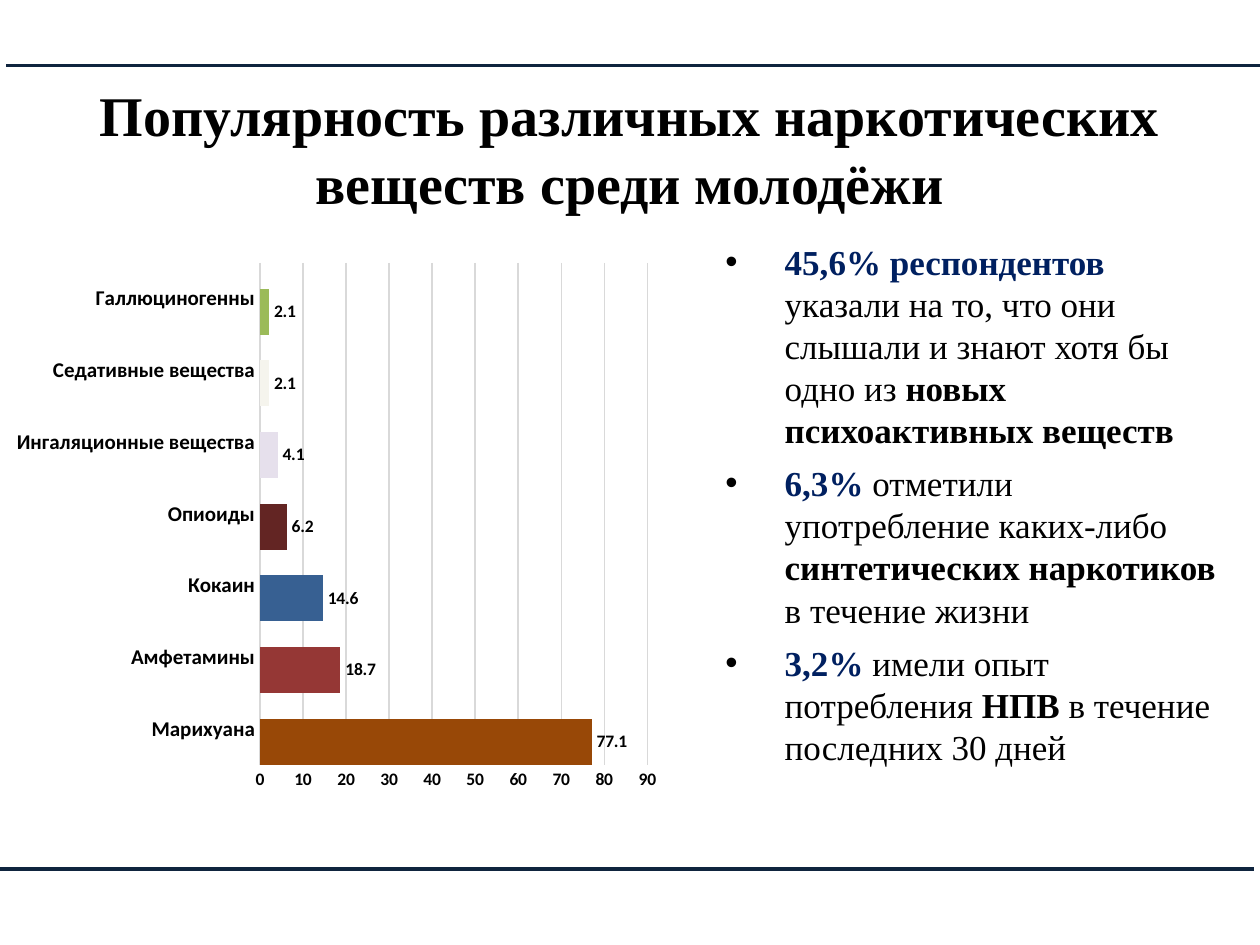
from typing import NamedTuple

from lxml import etree
from pptx import Presentation
from pptx.chart.data import CategoryChartData
from pptx.dml.color import RGBColor
from pptx.enum.chart import XL_CHART_TYPE, XL_LABEL_POSITION, XL_TICK_MARK
from pptx.enum.shapes import MSO_CONNECTOR
from pptx.enum.text import MSO_ANCHOR, MSO_AUTO_SIZE, PP_ALIGN
from pptx.oxml.ns import qn
from pptx.util import Pt

BAR = XL_CHART_TYPE.BAR_CLUSTERED
OUTSIDE = XL_LABEL_POSITION.OUTSIDE_END
NO_TICK = XL_TICK_MARK.NONE
STRAIGHT = MSO_CONNECTOR.STRAIGHT
MIDDLE = MSO_ANCHOR.MIDDLE
NO_FIT = MSO_AUTO_SIZE.NONE
CENTER = PP_ALIGN.CENTER

COLORS = {"text": "000000", "accent": "002060", "rule": "0F243E", "grid": "D9D9D9"}
SERIF = "Times New Roman"
SANS = "Calibri"
INSET = 7.2


class Span(NamedTuple):
    text: str
    bold: bool = False
    color: str = "text"


class Rule(NamedTuple):
    left: float
    right: float
    y: float


class Bar(NamedTuple):
    name: str
    value: float
    color: str


RULES = [Rule(0, 716.4, 496.8), Rule(3.6, 720, 37.44)]
BARS = [
    Bar("Марихуана", 77.1, "984807"),
    Bar("Амфетамины", 18.7, "953735"),
    Bar("Кокаин", 14.6, "376092"),
    Bar("Опиоиды", 6.2, "632523"),
    Bar("Ингаляционные вещества", 4.1, "E6E0EC"),
    Bar("Седативные вещества", 2.1, "F5F4ED"),
    Bar("Галлюциногенны", 2.1, "9BBB59"),
]
SERIES_COLORS = ["4F81BD", "C0504D", "9BBB59"]
PLOT = {"x": 0.38, "y": 0.02, "w": 0.58, "h": 0.92}
BULLETS = [
    [
        Span("45,6% респондентов ", True, "accent"),
        Span("указали на то, что они слышали и знают хотя бы одно из "),
        Span("новых психоактивных веществ", True),
    ],
    [
        Span("6,3%", True, "accent"),
        Span(" отметили употребление каких-либо "),
        Span("синтетических наркотиков ", True),
        Span("в течение жизни"),
    ],
    [
        Span("3,2% ", True, "accent"),
        Span("имели опыт потребления "),
        Span("НПВ", True),
        Span(" в течение последних 30 дней"),
    ],
]


def rgb(name: str) -> RGBColor:
    return RGBColor.from_string(COLORS.get(name, name))


def style_font(font, size: float, face: str, bold: bool = True, color: str = "text") -> None:
    font.size = Pt(size)
    font.name = face
    font.bold = bold
    font.color.rgb = rgb(color)


def add_span(para, span: Span, size: float) -> None:
    run = para.add_run()
    run.text = span.text
    style_font(run.font, size, SERIF, span.bold, span.color)


def prepare_frame(frame) -> None:
    frame.word_wrap = True
    frame.auto_size = NO_FIT
    frame.margin_left = frame.margin_right = Pt(INSET)
    frame.margin_top = frame.margin_bottom = Pt(INSET)


def fill_title(title) -> None:
    title.left, title.top, title.width, title.height = Pt(36), Pt(61.92), Pt(648), Pt(45.36)
    frame = title.text_frame
    prepare_frame(frame)
    frame.vertical_anchor = MIDDLE
    para = frame.paragraphs[0]
    para.alignment = CENTER
    para.space_after = Pt(6)
    add_span(para, Span("Популярность различных наркотических веществ среди молодёжи", True), 32)


def add_bullets(page) -> None:
    box = page.shapes.add_textbox(Pt(405.36), Pt(130.32), Pt(300.24), Pt(325.44))
    frame = box.text_frame
    prepare_frame(frame)
    for index, spans in enumerate(BULLETS):
        para = frame.paragraphs[0] if index == 0 else frame.add_paragraph()
        if index:
            para.space_before = Pt(6.4)
        props = para._p.get_or_add_pPr()
        props.set("marL", str(Pt(36)))
        props.set("indent", str(Pt(-33.84)))
        bullet_color = etree.SubElement(props, qn("a:buClr"))
        etree.SubElement(bullet_color, qn("a:srgbClr"), val=COLORS["text"])
        etree.SubElement(props, qn("a:buFont"), typeface="Arial")
        etree.SubElement(props, qn("a:buChar"), char="•")
        for span in spans:
            add_span(para, span, 20)


def place_plot(chart) -> None:
    plot_area = chart._chartSpace.chart.plotArea
    for old in plot_area.findall(qn("c:layout")):
        plot_area.remove(old)
    layout = etree.Element(qn("c:layout"))
    plot_area.insert(0, layout)
    manual = etree.SubElement(layout, qn("c:manualLayout"))
    etree.SubElement(manual, qn("c:layoutTarget"), val="inner")
    for side in "xy":
        etree.SubElement(manual, qn(f"c:{side}Mode"), val="edge")
    for key, share in PLOT.items():
        etree.SubElement(manual, qn(f"c:{key}"), val=str(share))


def style_axis(axis, size: float) -> None:
    axis.major_tick_mark = axis.minor_tick_mark = NO_TICK
    style_font(axis.tick_labels.font, size, SANS)


def style_line(line) -> None:
    line.color.rgb = rgb("grid")
    line.width = Pt(0.75)


def add_bar_chart(page) -> None:
    data = CategoryChartData()
    data.categories = [bar.name for bar in BARS]
    data.add_series("Series 1", [bar.value for bar in BARS])
    for name in ("Series 2", "Series 3"):
        data.add_series(name, [None] * len(BARS))
    chart = page.shapes.add_chart(BAR, Pt(3.6), Pt(144), Pt(381.6), Pt(311.76), data).chart
    chart.has_legend = False
    chart.has_title = False
    style_font(chart.font, 10, SANS)
    place_plot(chart)

    plot = chart.plots[0]
    plot.vary_by_categories = False
    plot.gap_width = 0
    plot.overlap = 72
    for series, color in zip(plot.series, SERIES_COLORS):
        series.format.fill.solid()
        series.format.fill.fore_color.rgb = rgb(color)
    amounts = plot.series[0]
    for index, bar in enumerate(BARS):
        fill = amounts.points[index].format.fill
        fill.solid()
        fill.fore_color.rgb = rgb(bar.color)
    labels = amounts.data_labels
    labels.show_value = True
    labels.position = OUTSIDE
    style_font(labels.font, 10, SANS)

    style_axis(chart.category_axis, 12)
    style_line(chart.category_axis.format.line)
    style_axis(chart.value_axis, 10)
    chart.value_axis.format.line.fill.background()
    style_line(chart.value_axis.major_gridlines.format.line)


def add_rule(page, rule: Rule) -> None:
    line = page.shapes.add_connector(STRAIGHT, Pt(rule.left), Pt(rule.y), Pt(rule.right), Pt(rule.y))
    line.line.color.rgb = rgb("rule")
    line.line.width = Pt(2.25)
    etree.SubElement(line._element.spPr, qn("a:effectLst"))


deck = Presentation()
deck.slide_width, deck.slide_height = Pt(720), Pt(540)
page = deck.slides.add_slide(deck.slide_layouts[5])
fill_title(page.shapes.title)
add_bullets(page)
add_bar_chart(page)
for rule in RULES:
    add_rule(page, rule)
deck.save("out.pptx")
